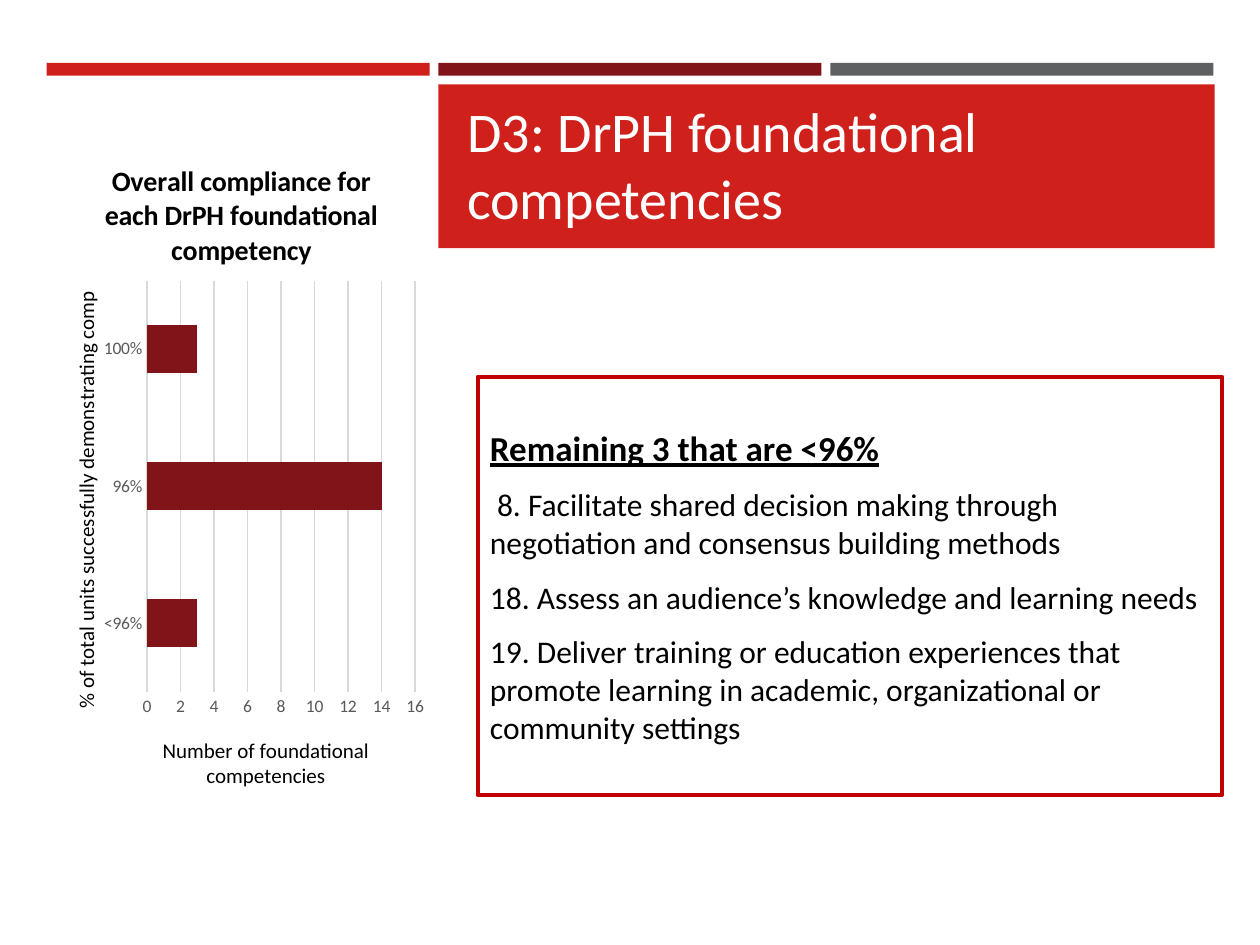
from pptx import Presentation
from pptx.chart.data import CategoryChartData
from pptx.dml.color import RGBColor
from pptx.enum.chart import XL_CHART_TYPE, XL_TICK_MARK
from pptx.enum.shapes import MSO_SHAPE
from pptx.enum.text import MSO_ANCHOR, PP_ALIGN
from pptx.oxml import parse_xml
from pptx.oxml.ns import nsdecls
from pptx.util import Inches, Pt

RECTANGLE = MSO_SHAPE.RECTANGLE
BAR_CLUSTERED = XL_CHART_TYPE.BAR_CLUSTERED
NO_TICK = XL_TICK_MARK.NONE
MIDDLE, BOTTOM = MSO_ANCHOR.MIDDLE, MSO_ANCHOR.BOTTOM
LEFT = PP_ALIGN.LEFT

RED = RGBColor(0xD0, 0x20, 0x1C)
MAROON = RGBColor(0x81, 0x14, 0x19)
GRAY = RGBColor(0x5F, 0x60, 0x62)
FRAME_RED = RGBColor(0xC0, 0x00, 0x00)
LABEL_GRAY = RGBColor(0x59, 0x59, 0x59)
GRID_GRAY = RGBColor(0xD9, 0xD9, 0xD9)
BLACK = RGBColor(0x00, 0x00, 0x00)
WHITE = RGBColor(0xFF, 0xFF, 0xFF)


def manual_layout(x, y, width=None, height=None):
    """Return a chart layout element, as fractions of the chart area."""
    tags = [("xMode", "edge"), ("yMode", "edge"), ("x", x), ("y", y)]
    if width is not None:
        tags = [("layoutTarget", "inner")] + tags + [("w", width), ("h", height)]
    parts = "".join(f'<c:{tag} val="{value}"/>' for tag, value in tags)
    return parse_xml(f'<c:layout {nsdecls("c")}><c:manualLayout>{parts}'
                     '</c:manualLayout></c:layout>')


class SlideBuilder:
    font_name = "Calibri"

    def __init__(self, page):
        self.page = page

    def style(self, font, size, color, bold=False):
        font.name = self.font_name
        font.size = Pt(size)
        font.bold = bold
        font.color.rgb = color

    def rectangle(self, left, top, width, height, fill=None, line=None):
        shape = self.page.shapes.add_shape(
            RECTANGLE, Inches(left), Inches(top), Inches(width), Inches(height))
        shape.shadow.inherit = False
        if fill is None:
            shape.fill.background()
        else:
            shape.fill.solid()
            shape.fill.fore_color.rgb = fill
        if line is None:
            shape.line.fill.background()
        else:
            shape.line.color.rgb = line
            shape.line.width = Pt(2.25)
        return shape

    def title(self, text, left, top, width, height):
        box = self.page.shapes.add_textbox(
            Inches(left), Inches(top), Inches(width), Inches(height))
        frame = box.text_frame
        frame.word_wrap = True
        frame.vertical_anchor = BOTTOM
        frame.text = text
        self.style(frame.paragraphs[0].runs[0].font, 32, WHITE)

    def framed_list(self, heading, items, left, top, width, height):
        frame = self.rectangle(left, top, width, height, line=FRAME_RED).text_frame
        frame.word_wrap = True
        frame.vertical_anchor = MIDDLE
        frame.text = "\n".join([heading] + items)
        for index, para in enumerate(frame.paragraphs):
            is_heading = index == 0
            para.alignment = LEFT
            para.space_before = Pt(0 if is_heading else 3.6)
            para.space_after = Pt(6)
            font = para.runs[0].font
            self.style(font, 20 if is_heading else 18, BLACK, bold=is_heading)
            font.underline = is_heading

    def chart_title(self, title, text, size, x, y, bold=False):
        title.text_frame.text = text
        self.style(title.text_frame.paragraphs[0].runs[0].font, size, BLACK, bold)
        element = title._element
        for old_layout in element.findall(manual_layout(0, 0).tag):
            element.remove(old_layout)
        element.tx.addnext(manual_layout(x, y)) if hasattr(element, "tx") \
            else element[0].addnext(manual_layout(x, y))

    def bar_chart(self, categories, values, left, top, width, height):
        data = CategoryChartData()
        data.categories = categories
        data.add_series("Series 1", values)
        chart = self.page.shapes.add_chart(
            BAR_CLUSTERED, Inches(left), Inches(top),
            Inches(width), Inches(height), data).chart
        self.style(chart.font, 10, BLACK)
        chart.has_legend = False
        chart.has_title = True

        # Bars
        plot = chart.plots[0]
        plot.gap_width = 182
        plot.vary_by_categories = False
        fill = plot.series[0].format.fill
        fill.solid()
        fill.fore_color.rgb = MAROON

        # Axes and gridlines
        category_axis, value_axis = chart.category_axis, chart.value_axis
        for axis in (category_axis, value_axis):
            axis.major_tick_mark = axis.minor_tick_mark = NO_TICK
            axis.has_title = True
            self.style(axis.tick_labels.font, 10, LABEL_GRAY)
        value_axis.minimum_scale, value_axis.maximum_scale = 0, 16
        value_axis.major_unit = 2
        value_axis.has_major_gridlines = True
        category_axis.has_major_gridlines = False
        value_axis.format.line.fill.background()
        for line in (category_axis.format.line, value_axis.major_gridlines.format.line):
            line.color.rgb = GRID_GRAY
            line.width = Pt(0.75)

        # Titles and plot position
        self.chart_title(chart.chart_title,
                         "Overall compliance for each DrPH foundational competency",
                         16, 0.16, 0.04, bold=True)
        self.chart_title(category_axis.axis_title,
                         "% of total units successfully demonstrating comp",
                         12, 0.08, 0.23)
        category_axis.axis_title.text_frame._txBody.bodyPr.set("rot", "-5400000")
        self.chart_title(value_axis.axis_title,
                         "Number of foundational competencies", 12, 0.31, 0.88)
        plot_area = chart._chartSpace.chart.plotArea
        plot_layout = manual_layout(0.28, 0.22, 0.68, 0.6)
        for old_layout in plot_area.findall(plot_layout.tag):
            plot_area.remove(old_layout)
        plot_area.insert(0, plot_layout)


def main():
    deck = Presentation()
    deck.slide_width, deck.slide_height = Inches(10), Inches(7.5)
    builder = SlideBuilder(deck.slides.add_slide(deck.slide_layouts[6]))

    # Title block
    builder.rectangle(3.48, 0.67, 6.16, 1.3, fill=RED)
    builder.title("D3: DrPH foundational competencies", 3.61, 0.77, 5.91, 1.11)

    # Three strips across the top
    for column, color in enumerate((RED, MAROON, GRAY)):
        builder.rectangle(0.37 + column * 3.11, 0.5, 3.04, 0.1, fill=color)

    # Competencies below the threshold
    builder.framed_list("Remaining 3 that are <96%", [
        " 8. Facilitate shared decision making through negotiation and "
        "consensus building methods",
        "18. Assess an audience’s knowledge and learning needs",
        "19. Deliver training or education experiences that promote learning in "
        "academic, organizational or community settings",
    ], 3.79, 2.99, 5.91, 3.32)

    # Compliance chart
    builder.bar_chart(["<96%", "96%", "100%"], [3, 14, 3], 0.29, 1.03, 3.13, 5.44)

    deck.save("out.pptx")


if __name__ == "__main__":
    main()
